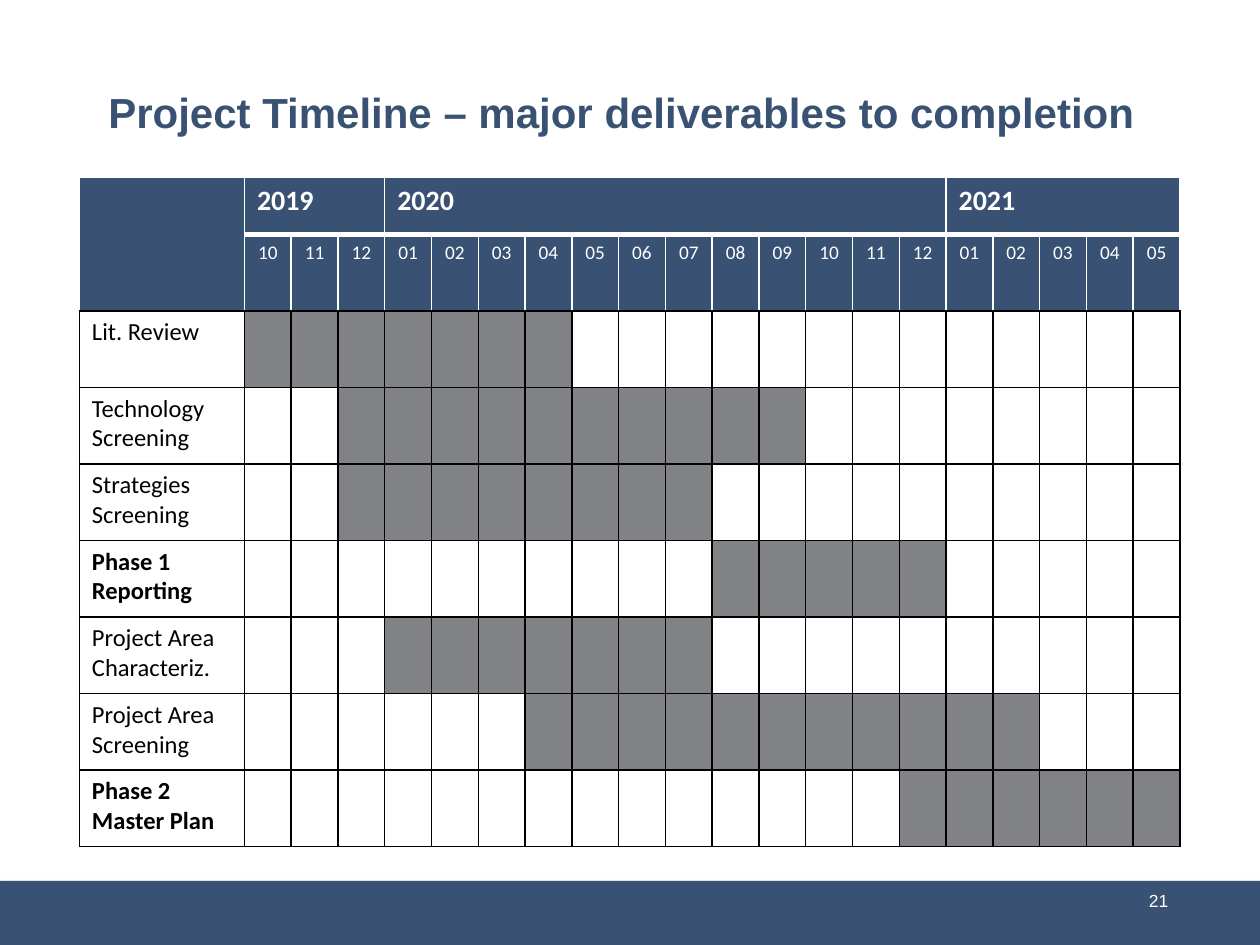
"""Build a project timeline slide with a month-by-month Gantt table."""
import dataclasses

import lxml.etree
import pptx
import pptx.dml.color
import pptx.enum.shapes
import pptx.enum.text
import pptx.oxml.ns
import pptx.util

WIDE, HIGH = 10, 7.5
COLORS = {"navy": "395173", "gray": "808285", "white": "FFFFFF", "black": "000000"}
ALIGN = pptx.enum.text.PP_ALIGN
MIDDLE = pptx.enum.text.MSO_ANCHOR.MIDDLE
MONTHS, FIRST, HEADS = 20, 10, 2


@dataclasses.dataclass
class Year:
    name: str
    start: int
    span: int


@dataclasses.dataclass
class Task:
    name: str
    start: int
    span: int
    bold: bool = False


@dataclasses.dataclass
class Edge:
    color: str = "black"
    width: float = 1


YEARS = [Year("2019", 0, 3), Year("2020", 3, 12), Year("2021", 15, 5)]
TASKS = [
    Task("Lit. Review", 0, 7),
    Task("Technology Screening", 2, 10),
    Task("Strategies Screening", 2, 8),
    Task("Phase 1 Reporting", 10, 5, True),
    Task("Project Area Characteriz.", 3, 7),
    Task("Project Area Screening", 6, 11),
    Task("Phase 2 Master Plan", 14, 6, True),
]


def rgb(name: str) -> pptx.dml.color.RGBColor:
    return pptx.dml.color.RGBColor.from_string(COLORS[name])


def area(left: float, top: float, width: float, height: float) -> list[int]:
    """Turn shares of the slide's size into lengths."""
    shares = ((left, WIDE), (top, HIGH), (width, WIDE), (height, HIGH))
    return [pptx.util.Inches(share * full) for share, full in shares]


def write(frame, text: str, *, size: float, color: str, font: str = "Calibri",
          bold: bool = False, align=ALIGN.LEFT) -> None:
    frame.word_wrap = True
    para = frame.paragraphs[0]
    para.alignment = align
    run = para.add_run()
    run.text = text
    run.font.name, run.font.size, run.font.bold = font, pptx.util.Pt(size), bold
    run.font.color.rgb = rgb(color)


def add(parent, tag: str, **values):
    names = {key: str(value) for key, value in values.items()}
    return lxml.etree.SubElement(parent, pptx.oxml.ns.qn(tag), names)


def paint(cell, fill: str, side: Edge, top: Edge, base: Edge) -> None:
    """Set a cell's borders, then its fill."""
    props = cell._tc.get_or_add_tcPr()
    for tag, edge in (("lnL", side), ("lnR", side), ("lnT", top), ("lnB", base)):
        line = add(props, f"a:{tag}", w=pptx.util.Pt(edge.width))
        add(add(line, "a:solidFill"), "a:srgbClr", val=COLORS[edge.color])
    cell.fill.solid()
    cell.fill.fore_color.rgb = rgb(fill)


def add_band(slide) -> None:
    band = slide.shapes.add_shape(pptx.enum.shapes.MSO_SHAPE.RECTANGLE,
                                  *area(0, 0.932, 1, 0.068))
    band.fill.solid()
    band.fill.fore_color.rgb = rgb("navy")
    band.line.fill.background()
    band.shadow.inherit = False
    glow = add(band._element.spPr.find(pptx.oxml.ns.qn("a:effectLst")), "a:outerShdw",
               blurRad=pptx.util.Pt(3.1), dist=pptx.util.Pt(1.8), dir=5400000)
    add(add(glow, "a:srgbClr", val=COLORS["black"]), "a:alpha", val=35000)


def add_title(slide, text: str) -> None:
    title = slide.shapes.title
    title.left, title.top, title.width, title.height = area(0.076, 0.08, 0.848, 0.077)
    frame = title.text_frame
    frame.auto_size = pptx.enum.text.MSO_AUTO_SIZE.NONE
    frame.vertical_anchor = MIDDLE
    write(frame, text, size=24, color="navy", font="Arial", bold=True)


def add_page(slide, text: str) -> None:
    frame = slide.shapes.add_textbox(*area(0.712, 0.927, 0.225, 0.053)).text_frame
    frame.vertical_anchor = MIDDLE
    write(frame, text, size=10, color="white", font="Arial", align=ALIGN.RIGHT)


def add_chart(slide) -> None:
    """Draw the header rows and one row of months for each task."""
    rows = HEADS + len(TASKS)
    box = area(0.063, 0.188, 0.874, 0.708)
    table = slide.shapes.add_table(rows, MONTHS + 1, *box).table
    table.columns[0].width = pptx.util.Inches(1.31)
    month = (box[2] - table.columns[0].width) // MONTHS
    for col in range(1, MONTHS + 1):
        table.columns[col].width = month
    table.rows[0].height = pptx.util.Inches(0.45)
    for row in range(1, rows):
        table.rows[row].height = (box[3] - table.rows[0].height) // (rows - 1)

    white, thick, black = Edge("white"), Edge("white", 3), Edge()
    for col in range(MONTHS + 1):
        paint(table.cell(0, col), "navy", white, white, thick if col else black)
        paint(table.cell(1, col), "navy", white, white, black)
        if col:
            name = f"{(FIRST + col - 2) % 12 + 1:02d}"
            write(table.cell(1, col).text_frame, name, size=11, color="white",
                  align=ALIGN.CENTER)
    table.cell(0, 0).merge(table.cell(1, 0))
    for year in YEARS:
        head = table.cell(0, year.start + 1)
        head.merge(table.cell(0, year.start + year.span))
        write(head.text_frame, year.name, size=16, color="white", bold=True)

    for row, task in enumerate(TASKS, HEADS):
        for col in range(MONTHS + 1):
            busy = task.start < col <= task.start + task.span
            paint(table.cell(row, col), "gray" if busy else "white", black, black, black)
        write(table.cell(row, 0).text_frame, task.name, size=14, color="black",
              bold=task.bold)


def main() -> None:
    deck = pptx.Presentation()
    deck.slide_width, deck.slide_height = pptx.util.Inches(WIDE), pptx.util.Inches(HIGH)
    slide = deck.slides.add_slide(deck.slide_layouts.get_by_name("Title Only"))
    add_band(slide)
    add_title(slide, "Project Timeline – major deliverables to completion")
    add_page(slide, "21")
    add_chart(slide)
    deck.save("out.pptx")


if __name__ == "__main__":
    main()
